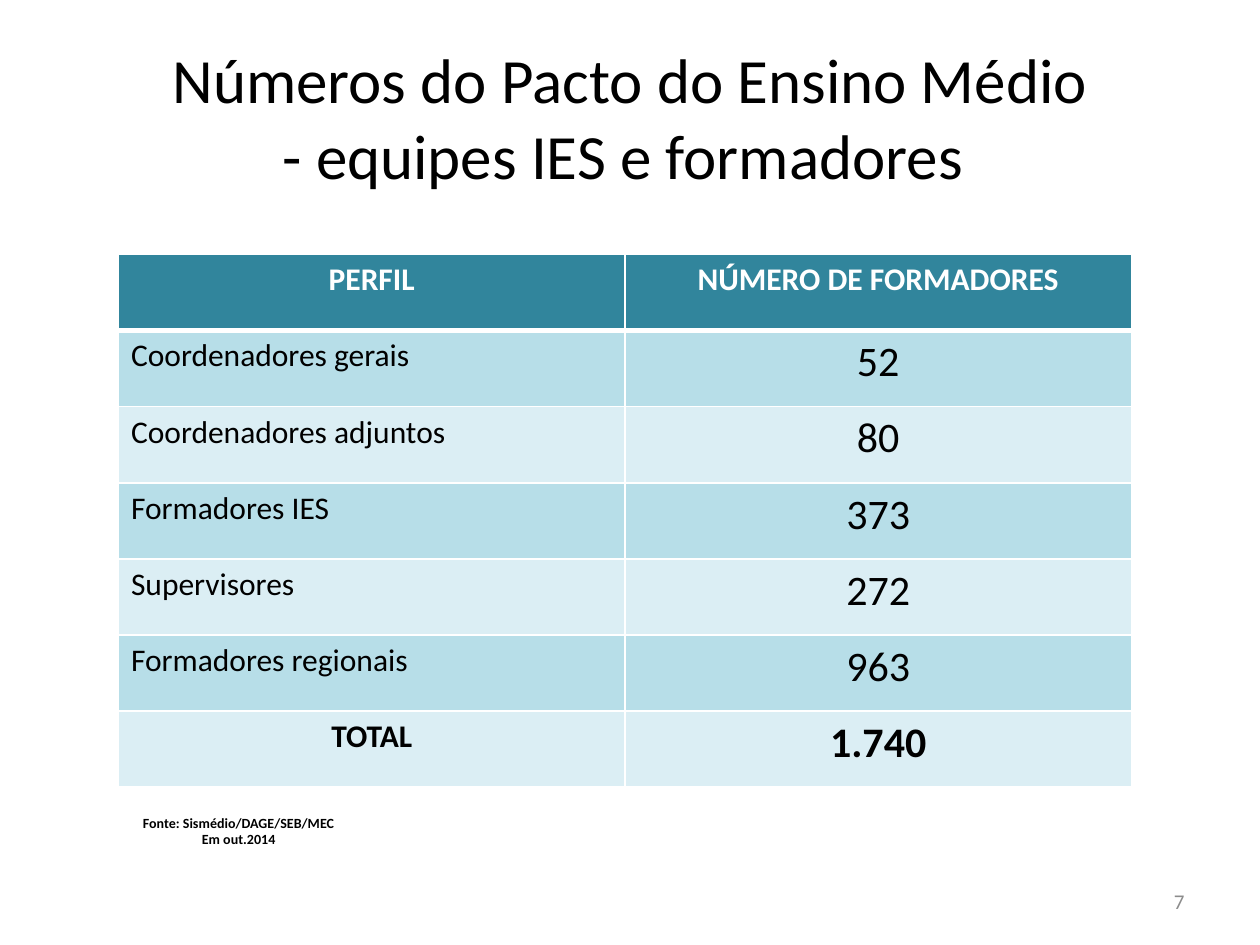
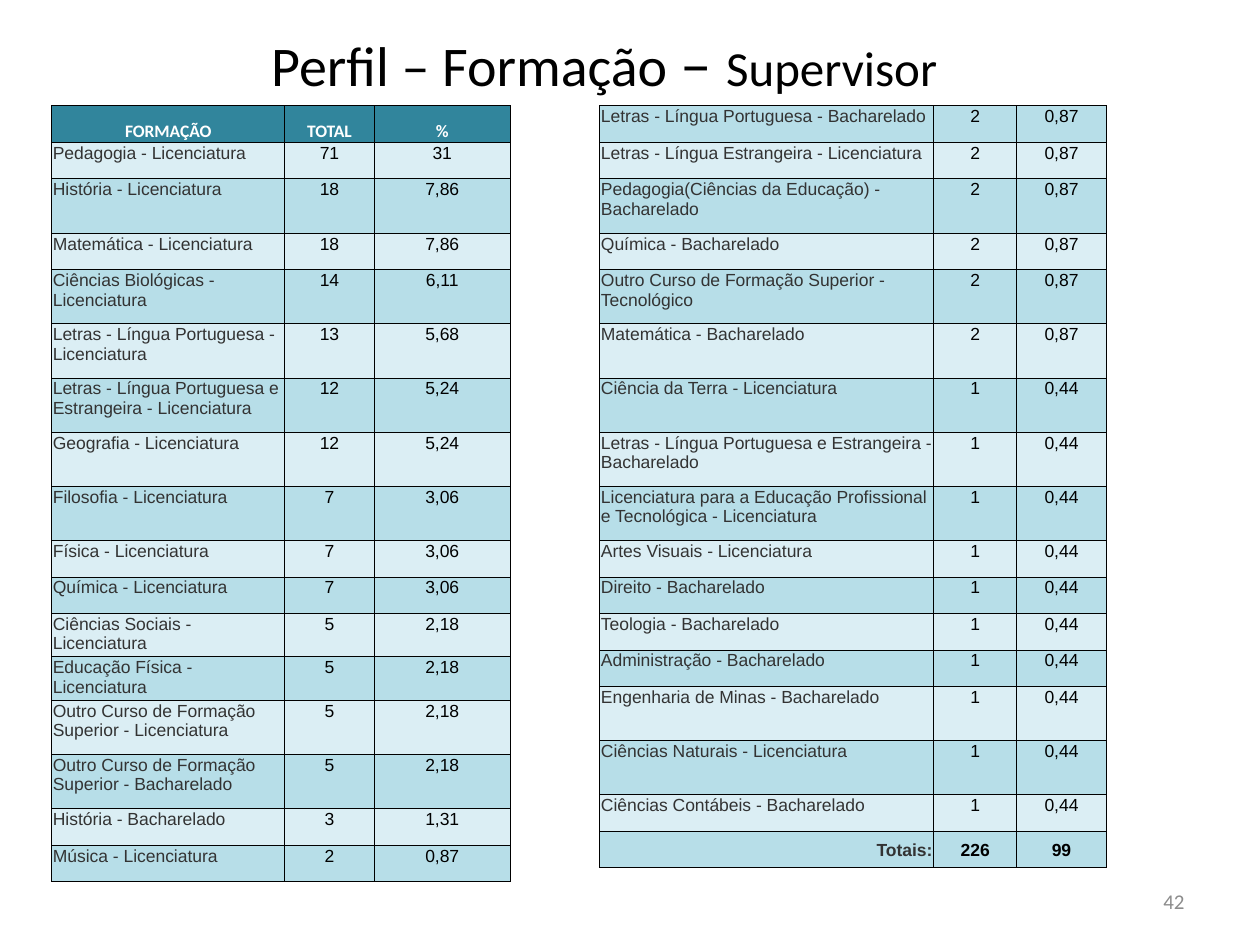
"""Build two slides on the teams and supervisor training of the Pacto do Ensino Médio."""
from dataclasses import dataclass

from lxml import etree
from pptx import Presentation
from pptx.dml.color import RGBColor
from pptx.enum import shapes, text
from pptx.oxml import ns
from pptx.util import Inches, Pt


@dataclass(frozen=True)
class Theme:
    heading: str = "Calibri"
    body: str = "Arial"
    black: str = "000000"
    white: str = "FFFFFF"
    label: str = "333333"
    muted: str = "8C8C8C"
    teal: str = "31859C"
    aqua: str = "B7DEE8"
    ice: str = "DBEEF4"
    title: int = 36
    subtitle: int = 32
    topic: int = 28
    figure: int = 24
    row: int = 18
    page: int = 12
    dense: int = 10
    source: int = 8


theme = Theme()
LEFT, CENTER, RIGHT = text.PP_ALIGN.LEFT, text.PP_ALIGN.CENTER, text.PP_ALIGN.RIGHT
TOP, MIDDLE, BOTTOM = text.MSO_ANCHOR.TOP, text.MSO_ANCHOR.MIDDLE, text.MSO_ANCHOR.BOTTOM


def write(paragraph, words, size, color=theme.black, font=theme.heading, bold=False, align=CENTER):
    paragraph.alignment = align
    run = paragraph.add_run()
    run.text = words
    run.font.size = Pt(size)
    run.font.name = font
    run.font.bold = bold
    run.font.color.rgb = RGBColor.from_string(color)


def add_grid(slide, left, top, widths, heights, fills, edge, edge_width, header_rule=None):
    table = slide.shapes.add_table(
        len(heights), len(widths), Inches(left), Inches(top),
        Inches(sum(widths)), Inches(sum(heights))).table
    table.first_row = table.horz_banding = False
    for column, width in zip(table.columns, widths):
        column.width = Inches(width)
    for index, (row, height) in enumerate(zip(table.rows, heights)):
        row.height = Inches(height)
        for cell in row.cells:
            properties = cell._tc.get_or_add_tcPr()
            for side in ("lnL", "lnR", "lnT", "lnB"):
                on_rule = header_rule and (index, side) in ((0, "lnB"), (1, "lnT"))
                line = etree.SubElement(properties, ns.qn(f"a:{side}"),
                                        w=str(Pt(header_rule if on_rule else edge_width)))
                paint = etree.SubElement(line, ns.qn("a:solidFill"))
                etree.SubElement(paint, ns.qn("a:srgbClr"), val=edge)
            cell.fill.solid()
            cell.fill.fore_color.rgb = RGBColor.from_string(fills[index])
    return table


teams = [
    ("PERFIL", "NÚMERO DE FORMADORES"),
    ("Coordenadores gerais", "52"),
    ("Coordenadores adjuntos", "80"),
    ("Formadores IES", "373"),
    ("Supervisores", "272"),
    ("Formadores regionais", "963"),
    ("TOTAL", "1.740"),
]
leading_degrees = [
    ("FORMAÇÃO", "TOTAL", "%"),
    ("Pedagogia - Licenciatura", "71", "31"),
    ("História - Licenciatura", "18", "7,86"),
    ("Matemática - Licenciatura", "18", "7,86"),
    ("Ciências Biológicas - Licenciatura", "14", "6,11"),
    ("Letras - Língua Portuguesa - Licenciatura", "13", "5,68"),
    ("Letras - Língua Portuguesa e Estrangeira - Licenciatura", "12", "5,24"),
    ("Geografia - Licenciatura", "12", "5,24"),
    ("Filosofia - Licenciatura", "7", "3,06"),
    ("Física - Licenciatura", "7", "3,06"),
    ("Química - Licenciatura", "7", "3,06"),
    ("Ciências Sociais - Licenciatura", "5", "2,18"),
    ("Educação Física - Licenciatura", "5", "2,18"),
    ("Outro Curso de Formação Superior - Licenciatura", "5", "2,18"),
    ("Outro Curso de Formação Superior - Bacharelado", "5", "2,18"),
    ("História - Bacharelado", "3", "1,31"),
    ("Música - Licenciatura", "2", "0,87"),
]
other_degrees = [
    ("Letras - Língua Portuguesa - Bacharelado", "2", "0,87"),
    ("Letras - Língua Estrangeira - Licenciatura", "2", "0,87"),
    ("Pedagogia(Ciências da Educação) - Bacharelado", "2", "0,87"),
    ("Química - Bacharelado", "2", "0,87"),
    ("Outro Curso de Formação Superior - Tecnológico", "2", "0,87"),
    ("Matemática - Bacharelado", "2", "0,87"),
    ("Ciência da Terra - Licenciatura", "1", "0,44"),
    ("Letras - Língua Portuguesa e Estrangeira - Bacharelado", "1", "0,44"),
    ("Licenciatura para a Educação Profissional e Tecnológica - Licenciatura", "1", "0,44"),
    ("Artes Visuais - Licenciatura", "1", "0,44"),
    ("Direito - Bacharelado", "1", "0,44"),
    ("Teologia - Bacharelado", "1", "0,44"),
    ("Administração - Bacharelado", "1", "0,44"),
    ("Engenharia de Minas - Bacharelado", "1", "0,44"),
    ("Ciências Naturais - Licenciatura", "1", "0,44"),
    ("Ciências Contábeis - Bacharelado", "1", "0,44"),
    ("Totais:", "226", "99"),
]

deck = Presentation()
deck.slide_width, deck.slide_height = Inches(10), Inches(7.5)

slides, titles = [], []
for title_box, page in (((0.5, 0.3, 9, 1.25), "7"), ((0.5, 0.13, 8.59, 0.71), "42")):
    slide = deck.slides.add_slide(deck.slide_layouts[6])
    slides.append(slide)
    lines = []
    for box in (title_box, (7.17, 6.95, 2.33, 0.4)):
        frame = slide.shapes.add_textbox(*map(Inches, box)).text_frame
        frame.word_wrap = True
        frame.vertical_anchor = MIDDLE
        lines.append(frame.paragraphs[0])
    titles.append(lines[0])
    write(lines[1], page, theme.page, color=theme.muted, align=RIGHT)
teams_slide, degrees_slide = slides
teams_title, degrees_title = titles

write(teams_title, "Números do Pacto do Ensino Médio", theme.title)
teams_title.add_line_break()
write(teams_title, "- equipes IES e formadores ", theme.title)

team_fills = [theme.teal] + [theme.aqua, theme.ice] * 3
team_grid = add_grid(teams_slide, 0.94, 2.02, [4.02] * 2, [4.23 / 7] * 7, team_fills,
                     theme.white, 1, header_rule=3)
for index, row in enumerate(teams):
    header, total = index == 0, index == len(teams) - 1
    for column, words in enumerate(row):
        write(team_grid.cell(index, column).text_frame.paragraphs[0], words,
              theme.figure if column and not header else theme.row,
              color=theme.white if header else theme.black,
              bold=header or total,
              align=CENTER if column or header or total else LEFT)

source = teams_slide.shapes.add_shape(
    shapes.MSO_SHAPE.ROUNDED_RECTANGLE, Inches(0.91), Inches(6.36), Inches(1.97), Inches(0.47))
source.shadow.inherit = False
source.fill.solid()
source.fill.fore_color.rgb = RGBColor.from_string(theme.white)
source.line.fill.background()
source.text_frame.word_wrap = True
source.text_frame.vertical_anchor = MIDDLE
write(source.text_frame.paragraphs[0], "Fonte: Sismédio/DAGE/SEB/MEC", theme.source, bold=True)
write(source.text_frame.add_paragraph(), "Em out.2014", theme.source, bold=True)

for words, size in (("Perfil – Formação ", theme.subtitle), ("– ", theme.title),
                    ("Supervisor", theme.topic)):
    write(degrees_title, words, size)

tall_rows = {2, 4, 5, 6, 7, 8, 13, 14}
heights = [0.43 if index in tall_rows else 0.29 for index in range(17)]
for left, widths, degrees in ((0.41, [1.85, 0.71, 1.08], leading_degrees),
                              (4.76, [2.65, 0.66, 0.71], other_degrees)):
    fills = [theme.ice if index % 2 else theme.aqua for index in range(len(degrees))]
    if degrees is leading_degrees:
        fills[0] = theme.teal
    grid = add_grid(degrees_slide, left, 0.84, widths, heights, fills, theme.black, 0.5)
    for index, row in enumerate(degrees):
        header, total = row[0] == "FORMAÇÃO", row[0] == "Totais:"
        for column, words in enumerate(row):
            cell = grid.cell(index, column)
            cell.margin_left = cell.margin_right = cell.margin_top = Inches(0.01)
            cell.margin_bottom = 0
            cell.vertical_anchor = BOTTOM if header else MIDDLE if total else TOP
            label_align = RIGHT if total else LEFT
            write(cell.text_frame.paragraphs[0], words, theme.dense,
                  color=theme.white if header else theme.black if column else theme.label,
                  font=theme.heading if header else theme.body,
                  bold=header or total,
                  align=CENTER if column or header else label_align)

deck.save("out.pptx")
